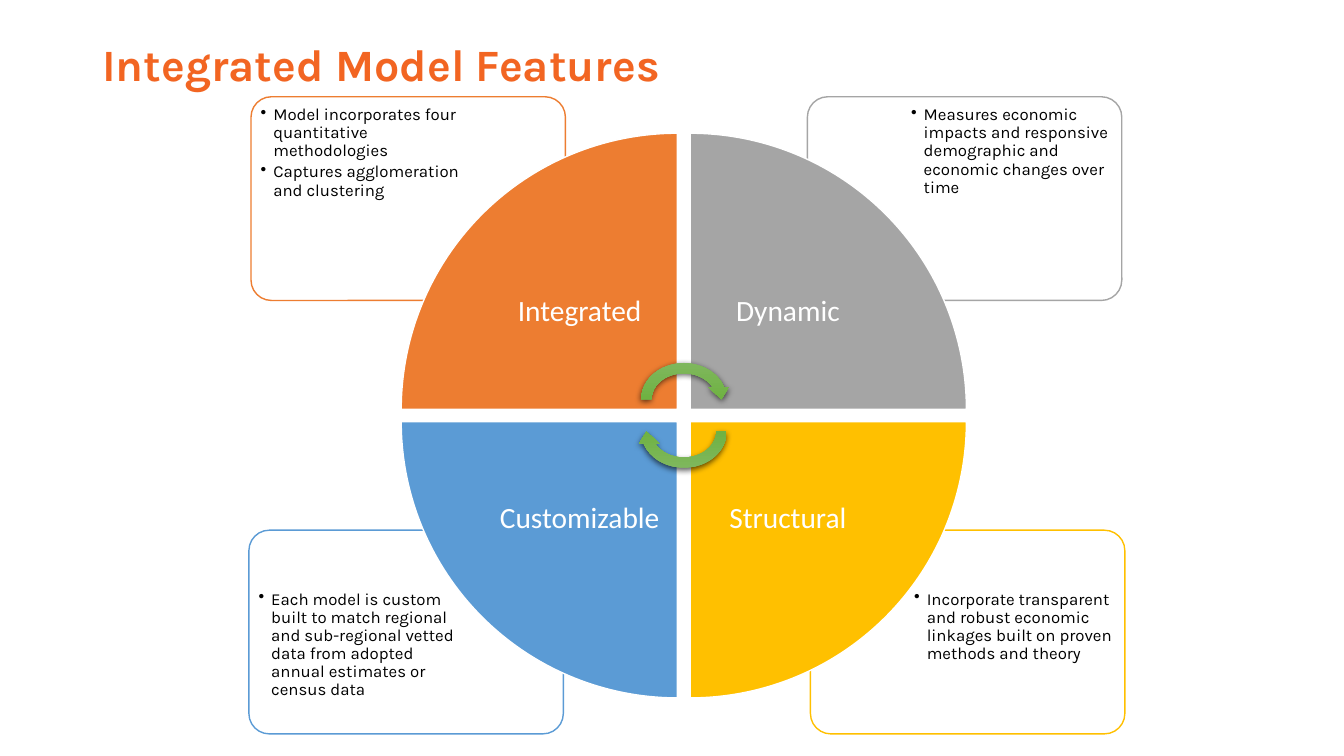
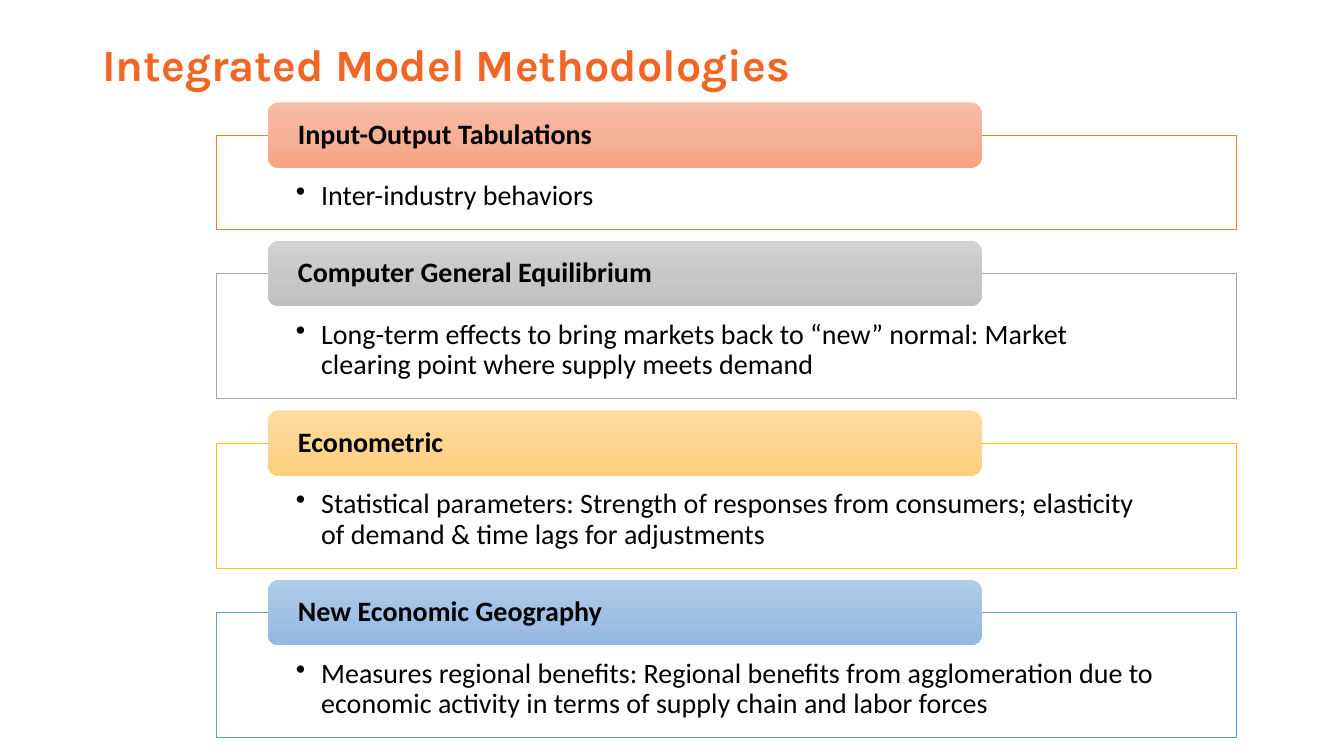
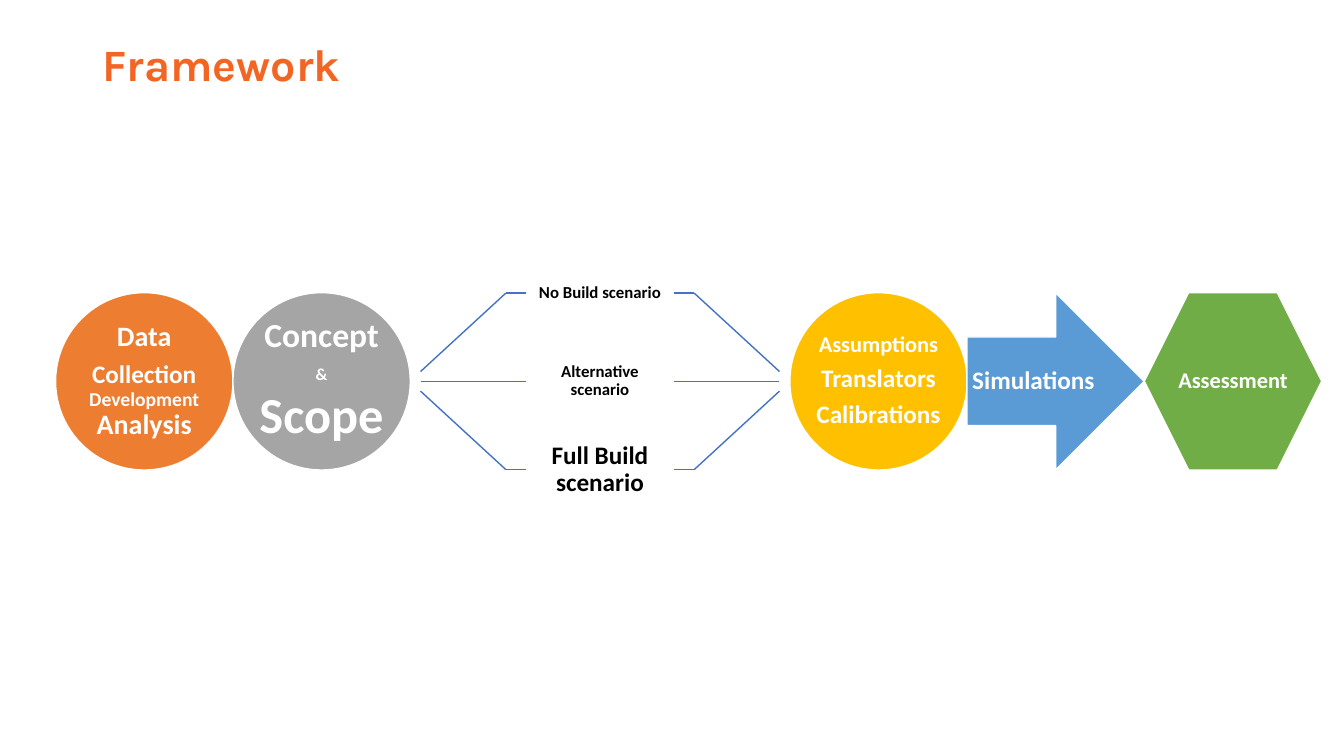
"""Build three slides on an integrated economic model."""
from copy import deepcopy
from dataclasses import dataclass

from lxml import etree
from pptx import Presentation
from pptx.dml.color import RGBColor
from pptx.enum.shapes import MSO_CONNECTOR, MSO_SHAPE
from pptx.enum.text import MSO_ANCHOR, MSO_AUTO_SIZE, PP_ALIGN
from pptx.oxml.ns import qn
from pptx.util import Pt

LEFT, CENTER = PP_ALIGN.LEFT, PP_ALIGN.CENTER
TOP, MIDDLE = MSO_ANCHOR.TOP, MSO_ANCHOR.MIDDLE
FIXED = MSO_AUTO_SIZE.NONE
STRAIGHT = MSO_CONNECTOR.STRAIGHT
RECT, ROUND, OVAL = MSO_SHAPE.RECTANGLE, MSO_SHAPE.ROUNDED_RECTANGLE, MSO_SHAPE.OVAL
WEDGE, CYCLE = MSO_SHAPE.PIE_WEDGE, MSO_SHAPE.CIRCULAR_ARROW
ARROW, HEXAGON = MSO_SHAPE.RIGHT_ARROW, MSO_SHAPE.HEXAGON


@dataclass(frozen=True)
class Theme:
    brand: str = "F26522"
    orange: str = "ED7D31"
    gray: str = "A5A5A5"
    gold: str = "FFC000"
    blue: str = "5B9BD5"
    green: str = "70AD47"
    link: str = "4472C4"
    white: str = "FFFFFF"
    black: str = "000000"
    leaf: tuple = ("81B861", "6FB242", "62A336")
    peach: tuple = ("F7BDA5", "F5B196", "F8A582")
    silver: tuple = ("D2D2D2", "C8C8C8", "C0C0C0")
    sand: tuple = ("FFDB9E", "FFD590", "FFD07C")
    sky: tuple = ("B1CBE9", "A3C1E5", "93B9E4")
    accent: str = "Karla"
    font: str = "Calibri"
    huge: int = 36
    title: int = 32
    head: int = 24
    label: int = 21
    body: int = 20
    mid: int = 18
    note: int = 16
    fine: int = 14
    tiny: int = 12


theme = Theme()


def write(shape, lines, font=theme.font, color=theme.black, bold=False,
          align=LEFT, anchor=TOP, inset=(0, 0, 0, 0), indent=0):
    frame = shape.text_frame
    frame.auto_size = FIXED
    frame.word_wrap = True
    frame.vertical_anchor = anchor
    (frame.margin_left, frame.margin_top,
     frame.margin_right, frame.margin_bottom) = map(Pt, inset)
    for index, (text, size, after) in enumerate(lines):
        para = frame.add_paragraph() if index else frame.paragraphs[0]
        if indent:
            props = para._p.get_or_add_pPr()
            props.set("marL", str(Pt(indent)))
            props.set("indent", str(-Pt(indent)))
            etree.SubElement(props, qn("a:buChar"), char="•")
        para.alignment = align
        para.line_spacing = 0.9
        para.space_before = Pt(0)
        para.space_after = Pt(after)
        run = para.add_run()
        run.text = text
        run.font.name = font
        run.font.size = Pt(size)
        run.font.bold = bold
        run.font.color.rgb = RGBColor.from_string(color)


def draw(slide, kind, box, fill, line=None, weight=1, alpha=None):
    shape = slide.shapes.add_shape(kind, *map(Pt, box))
    shape.shadow.inherit = False
    if isinstance(fill, tuple):
        shape.fill.gradient()
        shape.fill.gradient_angle = 270
        stops = shape._element.spPr.find(".//" + qn("a:gsLst"))
        stops.insert(1, deepcopy(stops[0]))
        for stop, shade, place in zip(shape.fill.gradient_stops, fill, (0, 0.5, 1)):
            stop.color.rgb = RGBColor.from_string(shade)
            stop.position = place
    else:
        shape.fill.solid()
        shape.fill.fore_color.rgb = RGBColor.from_string(fill)
        if alpha:
            tint = shape._element.spPr.find(".//" + qn("a:srgbClr"))
            etree.SubElement(tint, qn("a:alpha"), val=str(alpha * 1000))
    if line:
        shape.line.color.rgb = RGBColor.from_string(line)
        shape.line.width = Pt(weight)
    else:
        shape.line.fill.background()
    return shape


deck = Presentation()
deck.slide_width, deck.slide_height = Pt(960), Pt(540)
slides = []
for title, width in (("Integrated Model Features", 599),
                     ("Integrated Model Methodologies", 599),
                     ("Framework", 748)):
    slide = deck.slides.add_slide(deck.slide_layouts[5])
    head = slide.shapes.title
    head.left, head.top, head.width, head.height = map(Pt, (65.8, 27.2, width, 63))
    write(head, [(title, theme.title, 0)], font=theme.accent, color=theme.brand,
          bold=True, inset=(7.2, 3.6, 7.2, 3.6))
    slides.append(slide)
wheel, stack, flow = slides

parts = (
    ("Integrated", theme.orange, 0, 0, 0, 179.3,
     ("Model incorporates four quantitative methodologies",
      "Captures agglomeration and clustering")),
    ("Dynamic", theme.gray, 1, 0, 90, 576.7,
     ("Measures economic impacts and responsive demographic and economic "
      "changes over time",)),
    ("Structural", theme.gold, 1, 1, 180, 578.9,
     ("Incorporate transparent and robust economic linkages built on proven "
      "methods and theory",)),
    ("Customizable", theme.blue, 0, 1, 270, 177.8,
     ("Each model is custom built to match regional and sub-regional vetted "
      "data from adopted annual estimates or census data",)),
)
for label, color, col, row, turn, left, points in parts:
    top = 69.1 + 309.6 * row
    card = draw(wheel, ROUND, (left, top, 224.6, 145.5), theme.white, color, alpha=90)
    card.adjustments[0] = 0.1
    box = (left + 3.3 + 67.2 * col, top + 3.2 + 36.4 * row, 151.4, 103)
    note = wheel.shapes.add_textbox(*map(Pt, box))
    write(note, [(point, theme.tiny, 2) for point in points], font=theme.accent,
          inset=(3.6, 3.6, 3.6, 3.6), indent=9)

side, inner = 197.3, 139.7
for label, color, col, row, turn, left, points in parts:
    x, y = 286.6 + 206.4 * col, 95.2 + 206 * row
    wedge = draw(wheel, WEDGE, (x, y, side, side), color, theme.white)
    wedge.rotation = turn
    box = (x + (side - inner) * (1 - col), y + (side - inner) * (1 - row), inner, inner)
    name = wheel.shapes.add_textbox(*map(Pt, box))
    write(name, [(label, theme.label, 0)], color=theme.white, align=CENTER,
          anchor=MIDDLE, inset=(11.5, 11.5, 11.5, 11.5))

for y, turn in ((255.6, 0), (278.6, 180)):
    hoop = draw(wheel, CYCLE, (454.3, y, 68.4, 59.2), theme.leaf)
    hoop.rotation = turn
    effects = hoop._element.spPr.find(qn("a:effectLst"))
    shadow = etree.SubElement(effects, qn("a:outerShdw"), blurRad=str(Pt(4.5)),
                              dist=str(Pt(1.5)), dir="5400000", rotWithShape="0")
    tint = etree.SubElement(shadow, qn("a:srgbClr"), val=theme.black)
    etree.SubElement(tint, qn("a:alpha"), val="63000")

top = 96.5
for label, color, shades, height, point in (
    ("Input-Output Tabulations", theme.orange, theme.peach, 67.2,
     "Inter-industry behaviors"),
    ("Computer General Equilibrium", theme.gray, theme.silver, 89.4,
     "Long-term effects to bring markets back to “new” normal: Market clearing "
     "point where supply meets demand"),
    ("Econometric", theme.gold, theme.sand, 89.4,
     "Statistical parameters: Strength of responses from consumers; elasticity "
     "of demand & time lags for adjustments"),
    ("New Economic Geography", theme.blue, theme.sky, 89.4,
     "Measures regional benefits: Regional benefits from agglomeration due to "
     "economic activity in terms of supply chain and labor forces"),
):
    panel = draw(stack, RECT, (154.8, top, 728.6, height), theme.white, color,
                 weight=0.5, alpha=90)
    write(panel, [(point, theme.body, 0)], inset=(56.6, 33.3, 56.6, 11.5), indent=18)
    tab = draw(stack, ROUND, (191.3, top - 23.3, 510, 46.5), shades)
    write(tab, [(label, theme.body, 0)], bold=True, anchor=MIDDLE,
          inset=(19.3, 0, 19.3, 0))
    top += height + 31.7

size, mid = 126.7, 272.4
for kind, color, x, lines in (
    (OVAL, theme.orange, 39.7,
     [("Data", theme.body, 7), ("Collection", theme.mid, 0),
      ("Development", theme.fine, 0), ("Analysis", theme.body, 0)]),
    (OVAL, theme.gray, 166.4,
     [("Concept", theme.head, 8), ("&", theme.tiny, 4), ("Scope", theme.huge, 0)]),
    (OVAL, theme.gold, 564.2,
     [("Assumptions", theme.note, 6), ("Translators", theme.mid, 6),
      ("Calibrations", theme.mid, 0)]),
    (ARROW, theme.blue, 690.7, [("Simulations", theme.mid, 0)]),
    (HEXAGON, theme.green, 817.4, [("Assessment", theme.note, 0)]),
):
    node = draw(flow, kind, (x, mid - size / 2, size, size), color, theme.white)
    write(node, lines, color=theme.white, bold=True, align=CENTER, anchor=MIDDLE)

axis = 428.6
for step, label, points, pad in ((-1, "No Build scenario", theme.tiny, 6.5),
                                 (0, "Alternative scenario", theme.tiny, 6.5),
                                 (1, "Full Build scenario", theme.mid, 10)):
    y, hub = mid + 63 * step, mid + 7 * step
    for sign in (-1, 1):
        for reach, start, end, stop in ((128.2, hub, 67.3, y), (67.3, y, 52.7, y)):
            line = flow.shapes.add_connector(
                STRAIGHT, Pt(axis + sign * reach), Pt(start),
                Pt(axis + sign * end), Pt(stop))
            line.line.color.rgb = RGBColor.from_string(theme.link)
            line.line.width = Pt(1)
            etree.SubElement(line._element.spPr, qn("a:effectLst"))
    name = flow.shapes.add_textbox(*map(Pt, (axis - 52.7, y - 31.4, 105.4, 62.8)))
    write(name, [(label, points, 0)], bold=True, align=CENTER, anchor=MIDDLE,
          inset=(pad, pad, pad, pad))

deck.save("out.pptx")
